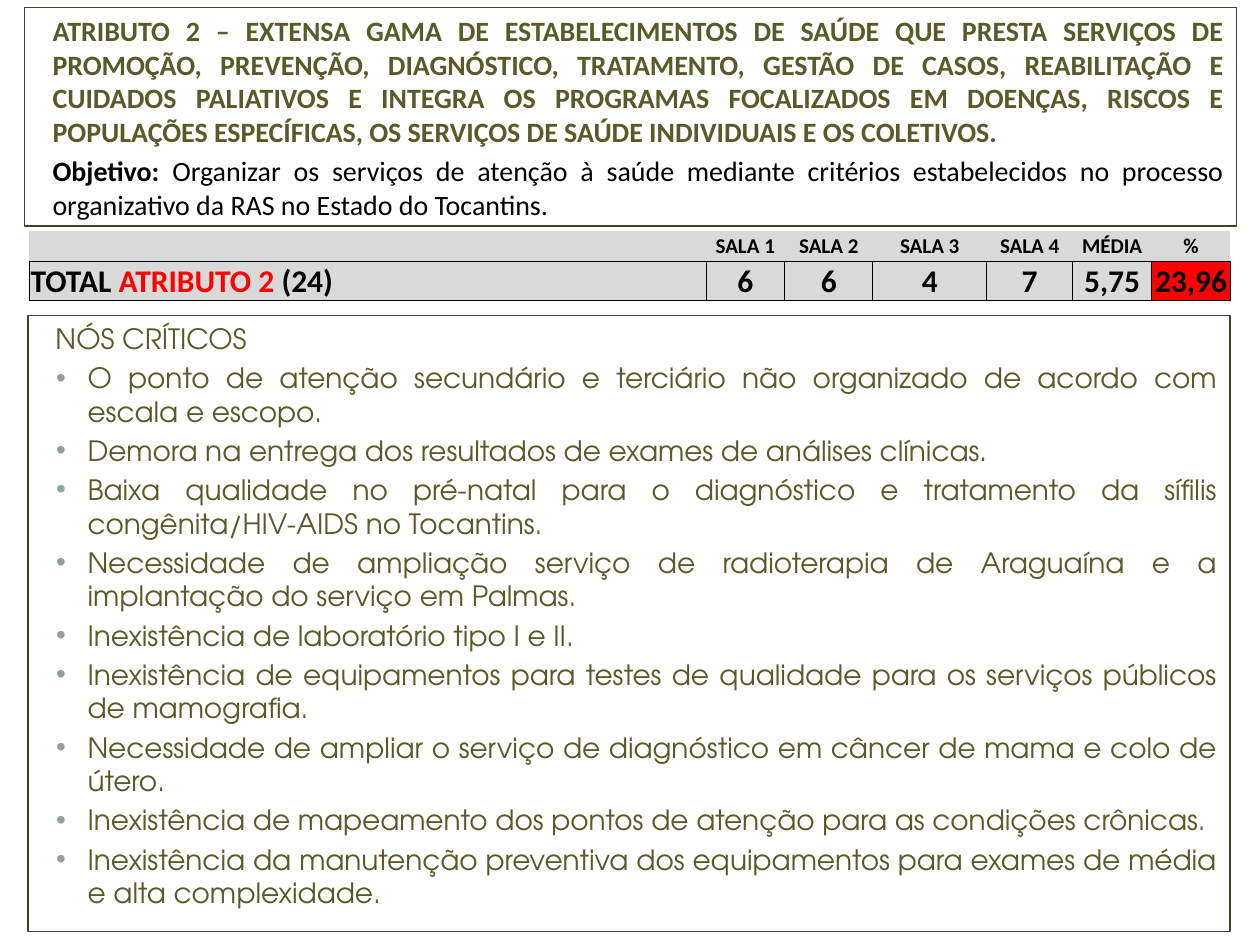
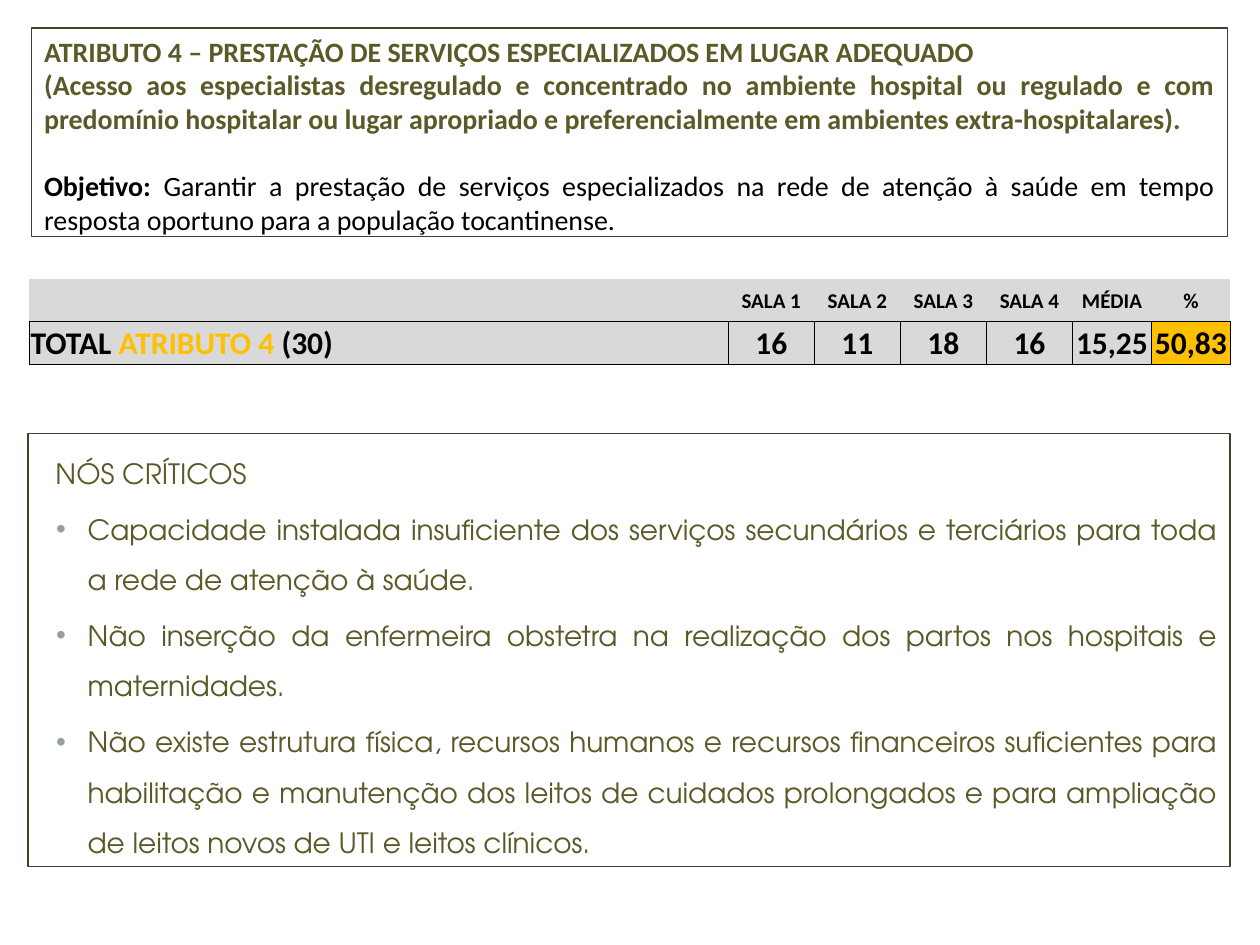
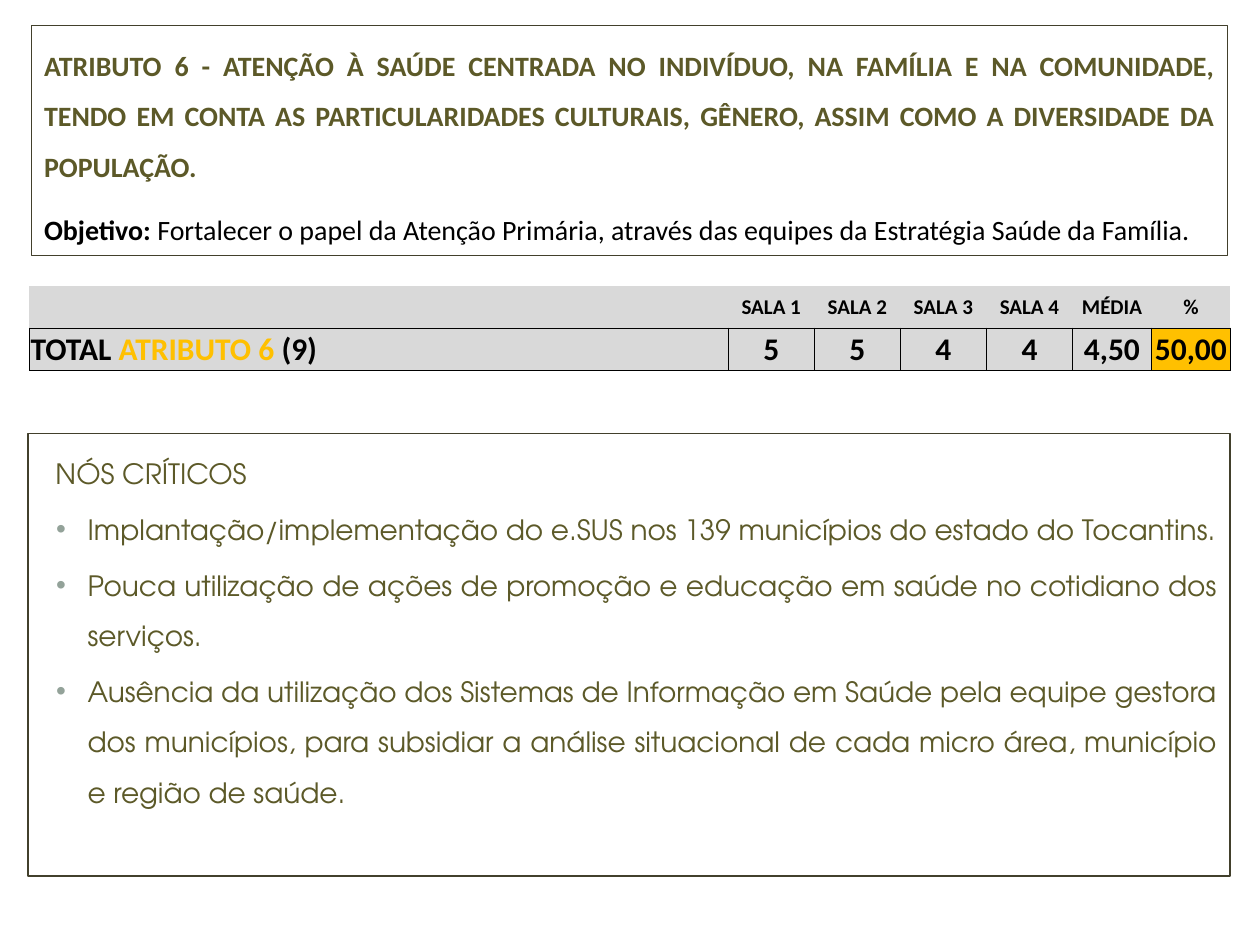
import pptx
import pptx.util
import pptx.dml.color
import pptx.enum.text
import pptx.oxml
import pptx.oxml.ns
from lxml import etree

Pt = pptx.util.Pt
qn = pptx.oxml.ns.qn
ALIGN = pptx.enum.text.PP_ALIGN
ANCHOR = pptx.enum.text.MSO_ANCHOR

OLIVE, FRAME, BULLET = "5C5928", "42402C", "93A299"
BLACK, WHITE, GRAY = "000000", "FFFFFF", "D9D9D9"
RED, AMBER = "FF0000", "FFC000"
HEADING_FONT, BODY_FONT = "Calibri", "TeX Gyre Adventor"
NO_TABLE_STYLE = "{2D5ABB26-0587-4C30-8999-92F81FD0307C}"

BODY_SIZE = 16
INDENT = 8.64
BULLET_INDENT, BULLET_HANG = 27, -18
PARAGRAPH_GAP = 3.2
TABLE_LEFT, TABLE_WIDTH = 16.8, 686.4
LABEL_WIDTHS = [286.8, 44.6]
RESULT_WIDTHS = [45.1, 45.1]
COLUMN_NAMES = ["SALA 1", "SALA 2", "SALA 3", "SALA 4", "MÉDIA", "%"]
CRITICAL_LEFT, CRITICAL_WIDTH = 16, 687

ATTRIBUTES = [
    dict(
        name="ATRIBUTO 2",
        maximum="(24)",
        heading=[
            "ATRIBUTO 2 – EXTENSA GAMA DE ESTABELECIMENTOS DE SAÚDE QUE PRESTA SERVIÇOS DE "
            "PROMOÇÃO, PREVENÇÃO, DIAGNÓSTICO, TRATAMENTO, GESTÃO DE CASOS, REABILITAÇÃO E "
            "CUIDADOS PALIATIVOS E INTEGRA OS PROGRAMAS FOCALIZADOS EM DOENÇAS, RISCOS E "
            "POPULAÇÕES ESPECÍFICAS, OS SERVIÇOS DE SAÚDE INDIVIDUAIS E OS COLETIVOS."
        ],
        objective="Organizar os serviços de atenção à saúde mediante critérios "
        "estabelecidos no processo organizativo da RAS no Estado do Tocantins.",
        heading_box=(14.2, 4.3, 692.6, 124.8),
        heading_indent=INDENT,
        heading_spacing=1,
        objective_gap=PARAGRAPH_GAP,
        scores=["6", "6", "4", "7", "5,75", "23,96"],
        signal=RED,
        room_widths=[45.1, 50.3, 65.1, 49.1],
        table_top=131.8,
        row_heights=[17.4, 22.4],
        critical_top=180.2,
        critical_height=352,
        critical_spacing=1,
        critical_points=[
            "O ponto de atenção secundário e terciário não organizado de acordo com escala e escopo.",
            "Demora na entrega dos resultados de exames de análises clínicas.",
            "Baixa qualidade no pré-natal para o diagnóstico e tratamento da sífilis "
            "congênita/HIV-AIDS no Tocantins.",
            "Necessidade de ampliação serviço de radioterapia de Araguaína e a implantação "
            "do serviço em Palmas.",
            "Inexistência de laboratório tipo I e II.",
            "Inexistência de equipamentos para testes de qualidade para os serviços públicos "
            "de mamografia.",
            "Necessidade de ampliar o serviço de diagnóstico em câncer de mama e colo de útero.",
            "Inexistência de mapeamento dos pontos de atenção para as condições crônicas.",
            "Inexistência da manutenção preventiva dos equipamentos para exames de média e "
            "alta complexidade.",
        ],
    ),
    dict(
        name="ATRIBUTO 4",
        maximum="(30)",
        heading=[
            "ATRIBUTO 4 – PRESTAÇÃO DE SERVIÇOS ESPECIALIZADOS EM LUGAR ADEQUADO",
            "(Acesso aos especialistas desregulado e concentrado no ambiente hospital ou "
            "regulado e com predomínio hospitalar ou lugar apropriado e preferencialmente "
            "em ambientes extra-hospitalares).",
        ],
        objective="Garantir a prestação de serviços especializados na rede de atenção à "
        "saúde em tempo resposta oportuno para a população tocantinense.",
        heading_box=(18, 16, 683.6, 119),
        heading_indent=0,
        heading_spacing=1,
        objective_gap=19.2,
        scores=["16", "11", "18", "16", "15,25", "50,83"],
        signal=AMBER,
        room_widths=[49.2] * 4,
        table_top=159.6,
        row_heights=[24.2, 24.2],
        critical_top=247.6,
        critical_height=247.4,
        critical_spacing=1.5,
        critical_points=[
            "Capacidade instalada insuficiente dos serviços secundários e terciários para "
            "toda a rede de atenção à saúde.",
            "Não inserção da enfermeira obstetra na realização dos partos nos hospitais e "
            "maternidades.",
            "Não existe estrutura física, recursos humanos e recursos financeiros suficientes "
            "para habilitação e manutenção dos leitos de cuidados prolongados e para "
            "ampliação de leitos novos de UTI e leitos clínicos.",
        ],
    ),
    dict(
        name="ATRIBUTO 6",
        maximum="(9)",
        heading=[
            "ATRIBUTO 6 - ATENÇÃO À SAÚDE CENTRADA NO INDIVÍDUO, NA FAMÍLIA E NA COMUNIDADE, "
            "TENDO EM CONTA AS PARTICULARIDADES CULTURAIS, GÊNERO, ASSIM COMO A DIVERSIDADE "
            "DA POPULAÇÃO."
        ],
        objective="Fortalecer o papel da Atenção Primária, através das equipes da "
        "Estratégia Saúde da Família.",
        heading_box=(18, 14.6, 683.6, 131.4),
        heading_indent=0,
        heading_spacing=1.5,
        objective_gap=7.2,
        scores=["5", "5", "4", "4", "4,50", "50,00"],
        signal=AMBER,
        room_widths=[49.2] * 4,
        table_top=163.2,
        row_heights=[24.2, 24.2],
        critical_top=247.6,
        critical_height=253,
        critical_spacing=1.5,
        critical_points=[
            "Implantação/implementação do e.SUS nos 139 municípios do estado do Tocantins.",
            "Pouca utilização de ações de promoção e educação em saúde no cotidiano dos serviços.",
            "Ausência da utilização dos Sistemas de Informação em Saúde pela equipe gestora "
            "dos municípios, para subsidiar a análise situacional de cada micro área, "
            "município e região de saúde.",
        ],
    ),
]


def rgb(color):
    return pptx.dml.color.RGBColor.from_string(color)


def paint(target, color):
    target.fill.solid()
    target.fill.fore_color.rgb = rgb(color)


def write_text(paragraph, text, size=BODY_SIZE, font=HEADING_FONT, color=BLACK, bold=False):
    run = paragraph.add_run()
    run.text = text
    run.font.size = Pt(size)
    run.font.name = font
    run.font.bold = bold
    run.font.color.rgb = rgb(color)


def next_paragraph(frame, indent=0, hang=0, spacing=1, gap=0):
    first = frame.paragraphs[0]
    paragraph = frame.add_paragraph() if first.runs else first
    paragraph.alignment = ALIGN.JUSTIFY
    paragraph.line_spacing = spacing
    paragraph.space_before = Pt(gap if first.runs else 0)
    properties = paragraph._p.get_or_add_pPr()
    properties.set("marL", str(Pt(indent)))
    properties.set("indent", str(Pt(hang)))
    return paragraph


def add_bullet(paragraph):
    properties = paragraph._p.get_or_add_pPr()
    color = etree.SubElement(properties, qn("a:buClr"))
    etree.SubElement(color, qn("a:srgbClr"), val=BULLET)
    etree.SubElement(properties, qn("a:buFont"), typeface="Arial")
    etree.SubElement(properties, qn("a:buChar"), char="•")


def frame_box(box):
    paint(box, WHITE)
    box.line.color.rgb = rgb(FRAME)
    box.line.width = Pt(0.75)
    frame = box.text_frame
    frame.word_wrap = True
    frame.auto_size = pptx.enum.text.MSO_AUTO_SIZE.NONE
    frame.vertical_anchor = ANCHOR.TOP
    return frame


def add_heading(slide, attribute):
    heading = slide.shapes.title
    heading.left, heading.top, heading.width, heading.height = map(Pt, attribute["heading_box"])
    frame = frame_box(heading)
    layout = dict(indent=attribute["heading_indent"], spacing=attribute["heading_spacing"])
    for statement in attribute["heading"]:
        write_text(next_paragraph(frame, **layout), statement, color=OLIVE, bold=True)
    objective = next_paragraph(frame, gap=attribute["objective_gap"], **layout)
    write_text(objective, "Objetivo: ", bold=True)
    write_text(objective, attribute["objective"])


def add_critical_points(slide, attribute):
    box = slide.shapes.add_textbox(
        Pt(CRITICAL_LEFT), Pt(attribute["critical_top"]),
        Pt(CRITICAL_WIDTH), Pt(attribute["critical_height"]))
    frame = frame_box(box)
    spacing = attribute["critical_spacing"]
    caption = next_paragraph(frame, INDENT, spacing=spacing)
    write_text(caption, "NÓS CRÍTICOS", font=BODY_FONT, color=OLIVE)
    for point in attribute["critical_points"]:
        paragraph = next_paragraph(frame, BULLET_INDENT, BULLET_HANG, spacing, PARAGRAPH_GAP)
        add_bullet(paragraph)
        write_text(paragraph, point, font=BODY_FONT, color=OLIVE)


def outline_cell(cell):
    properties = cell._tc.get_or_add_tcPr()
    for position, side in enumerate(("lnL", "lnR", "lnT", "lnB")):
        line = etree.Element(qn("a:" + side), w=str(Pt(0.5)))
        fill = etree.SubElement(line, qn("a:solidFill"))
        etree.SubElement(fill, qn("a:srgbClr"), val=BLACK)
        properties.insert(position, line)


def format_cell(cell, fill=GRAY):
    paint(cell, fill)
    cell.vertical_anchor = ANCHOR.MIDDLE
    cell.margin_left = cell.margin_right = cell.margin_top = Pt(0.72)
    cell.margin_bottom = 0
    return cell.text_frame.paragraphs[0]


def write_cell(cell, text, size, fill=GRAY):
    paragraph = format_cell(cell, fill)
    paragraph.alignment = ALIGN.CENTER
    write_text(paragraph, text, size=size, bold=True)


def add_scores(slide, attribute):
    measured = attribute["room_widths"] + RESULT_WIDTHS
    label_rest = TABLE_WIDTH - sum(LABEL_WIDTHS) - sum(measured)
    widths = LABEL_WIDTHS + [label_rest] + measured
    heights = attribute["row_heights"]
    holder = slide.shapes.add_table(
        len(heights), len(widths), Pt(TABLE_LEFT), Pt(attribute["table_top"]),
        Pt(TABLE_WIDTH), Pt(sum(heights)))
    scores = holder.table
    scores.first_row = scores.horz_banding = False
    next(holder.element.iter(qn("a:tableStyleId"))).text = NO_TABLE_STYLE
    for column, width in zip(scores.columns, widths):
        column.width = Pt(width)
    for row, height in zip(scores.rows, heights):
        row.height = Pt(height)

    label_count = len(widths) - len(COLUMN_NAMES)
    for index in range(label_count):
        for row in range(2):
            blank = format_cell(scores.cell(row, index))
            etree.SubElement(blank._p, qn("a:endParaRPr"), sz="1200")
        outline_cell(scores.cell(1, index))
    total = scores.cell(1, 0)
    total.merge(scores.cell(1, label_count - 1))
    label = total.text_frame.paragraphs[0]
    for part, color in (("TOTAL ", BLACK), (attribute["name"] + " ", attribute["signal"]),
                        (attribute["maximum"], BLACK)):
        write_text(label, part, size=18, color=color, bold=True)

    for index, (name, score) in enumerate(zip(COLUMN_NAMES, attribute["scores"]), label_count):
        write_cell(scores.cell(0, index), name, 12)
        fill = attribute["signal"] if name == "%" else GRAY
        write_cell(scores.cell(1, index), score, 18, fill)
        outline_cell(scores.cell(1, index))


def main():
    deck = pptx.Presentation()
    deck.slide_width, deck.slide_height = Pt(720), Pt(540)
    title_only = deck.slide_layouts[5]
    for attribute in ATTRIBUTES:
        slide = deck.slides.add_slide(title_only)
        add_heading(slide, attribute)
        add_critical_points(slide, attribute)
        add_scores(slide, attribute)
    deck.save("out.pptx")


if __name__ == "__main__":
    main()
